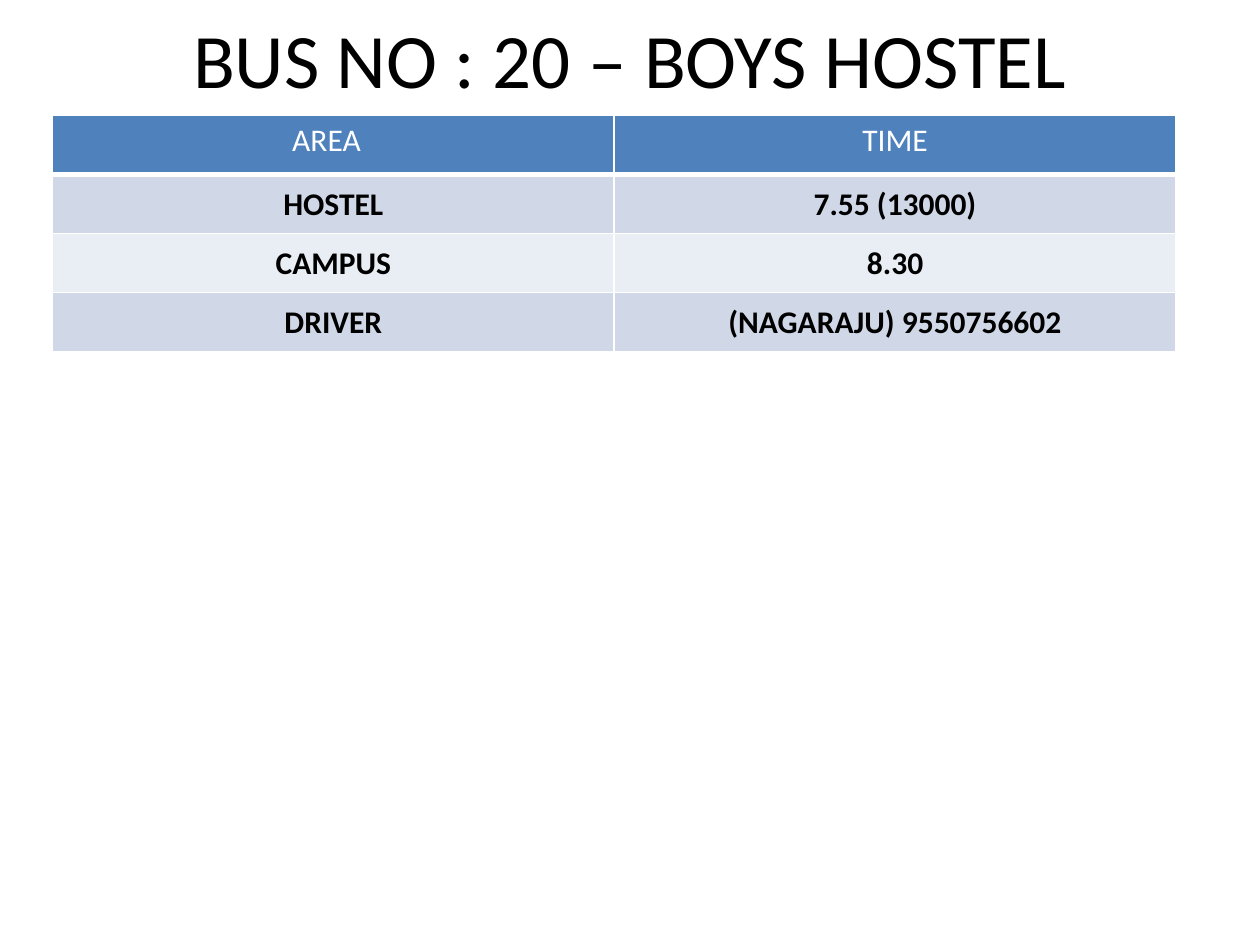
from pptx import Presentation
from pptx.dml.color import RGBColor
from pptx.enum import text
from pptx.oxml import parse_xml
from pptx.oxml.ns import nsdecls
from pptx.util import Pt

# Content
HEADING = "BUS NO : 20 – BOYS HOSTEL"
COLUMNS = ("AREA", "TIME")
STOPS = [
    ("HOSTEL", "7.55 (13000)"),
    ("CAMPUS", "8.30"),
    ("DRIVER", "(NAGARAJU) 9550756602"),
]

THEME = {
    "font": "Calibri", "heading_size": 44, "table_size": 18,
    "dark": "000000", "light": "FFFFFF",
    "header": "4F81BD", "bands": ("D0D8E8", "E9EDF4"),
}

# Layout in points
HEADING_BOX = (54, 0, 612, 66)
TABLE_LEFT, TABLE_TOP = 30, 66
COLUMN_WIDTH, ROW_HEIGHT = 321, 33.75
HEADER_RIGHT_INSETS = (15, 7.2)  # AREA sits slightly left of centre


def style_text(frame, size, color, bold=False):
    paragraph = frame.paragraphs[0]
    paragraph.alignment = text.PP_ALIGN.CENTER
    font = paragraph.runs[0].font
    font.name, font.size, font.bold = THEME["font"], Pt(size), bold
    font.color.rgb = RGBColor.from_string(color)


def add_borders(cell, bottom_width):
    properties = cell._tc.get_or_add_tcPr()
    widths = (("lnL", 1), ("lnR", 1), ("lnT", 1), ("lnB", bottom_width))
    for position, (side, width) in enumerate(widths):
        properties.insert(position, parse_xml(
            f'<a:{side} {nsdecls("a")} w="{Pt(width)}"><a:solidFill>'
            f'<a:srgbClr val="{THEME["light"]}"/></a:solidFill></a:{side}>'))


def style_cell(cell, row, column):
    is_header = row == 0
    fill = THEME["header"] if is_header else THEME["bands"][(row - 1) % 2]
    cell.fill.solid()
    cell.fill.fore_color.rgb = RGBColor.from_string(fill)
    if is_header:
        cell.margin_right = Pt(HEADER_RIGHT_INSETS[column])
    else:
        cell.vertical_anchor = text.MSO_ANCHOR.MIDDLE
        cell.margin_left = cell.margin_right = cell.margin_top = Pt(0.75)
        cell.margin_bottom = Pt(0)
    style_text(cell.text_frame, THEME["table_size"],
               THEME["light" if is_header else "dark"], bold=not is_header)
    add_borders(cell, 3 if is_header else 1)


def main():
    deck = Presentation()
    deck.slide_width, deck.slide_height = Pt(720), Pt(540)
    slide = deck.slides.add_slide(deck.slide_layouts[5])

    # Title
    heading = slide.shapes.title
    heading.left, heading.top, heading.width, heading.height = map(Pt, HEADING_BOX)
    heading.text_frame.text = HEADING
    heading.text_frame.vertical_anchor = text.MSO_ANCHOR.MIDDLE
    style_text(heading.text_frame, THEME["heading_size"], THEME["dark"])

    # Timetable
    rows = [COLUMNS, *STOPS]
    timetable = slide.shapes.add_table(
        len(rows), len(COLUMNS), Pt(TABLE_LEFT), Pt(TABLE_TOP),
        Pt(COLUMN_WIDTH * len(COLUMNS)), Pt(ROW_HEIGHT * len(rows))).table
    for row, values in enumerate(rows):
        for column, value in enumerate(values):
            cell = timetable.cell(row, column)
            cell.text_frame.text = value
            style_cell(cell, row, column)

    deck.save("out.pptx")


if __name__ == "__main__":
    main()
